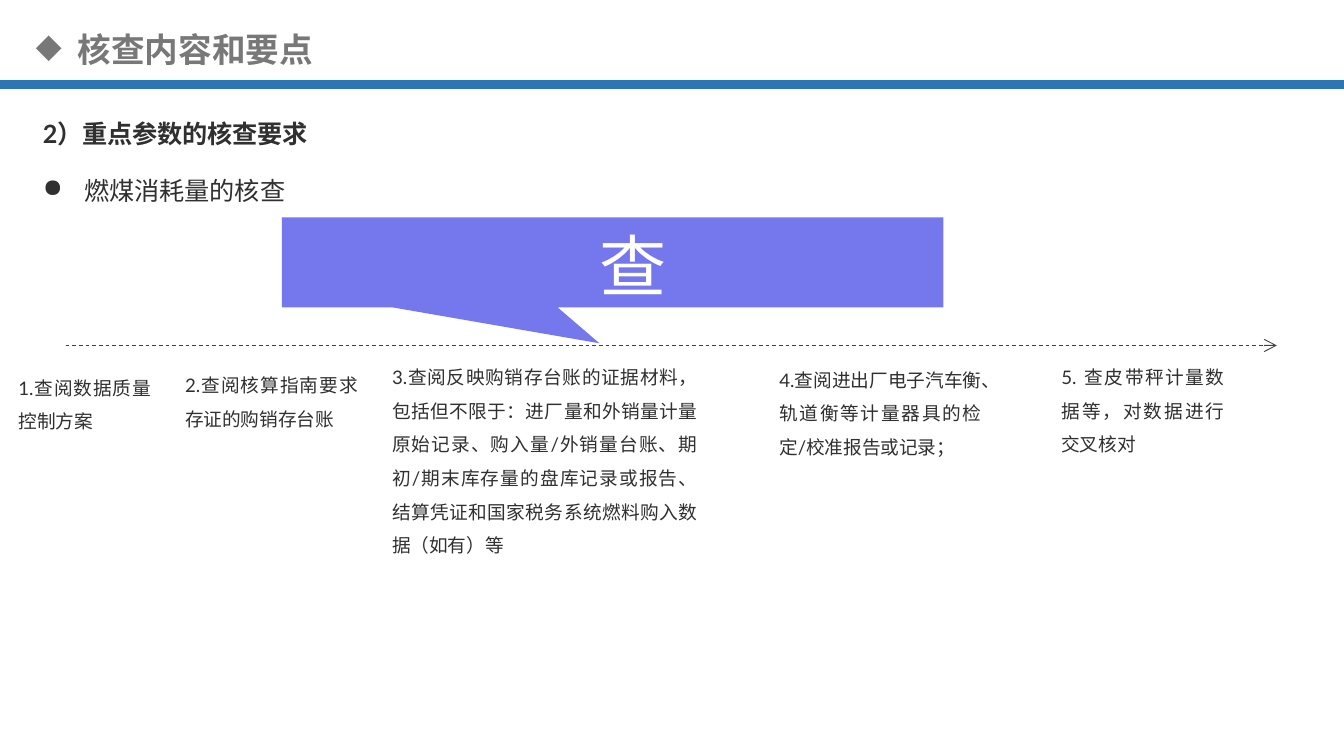
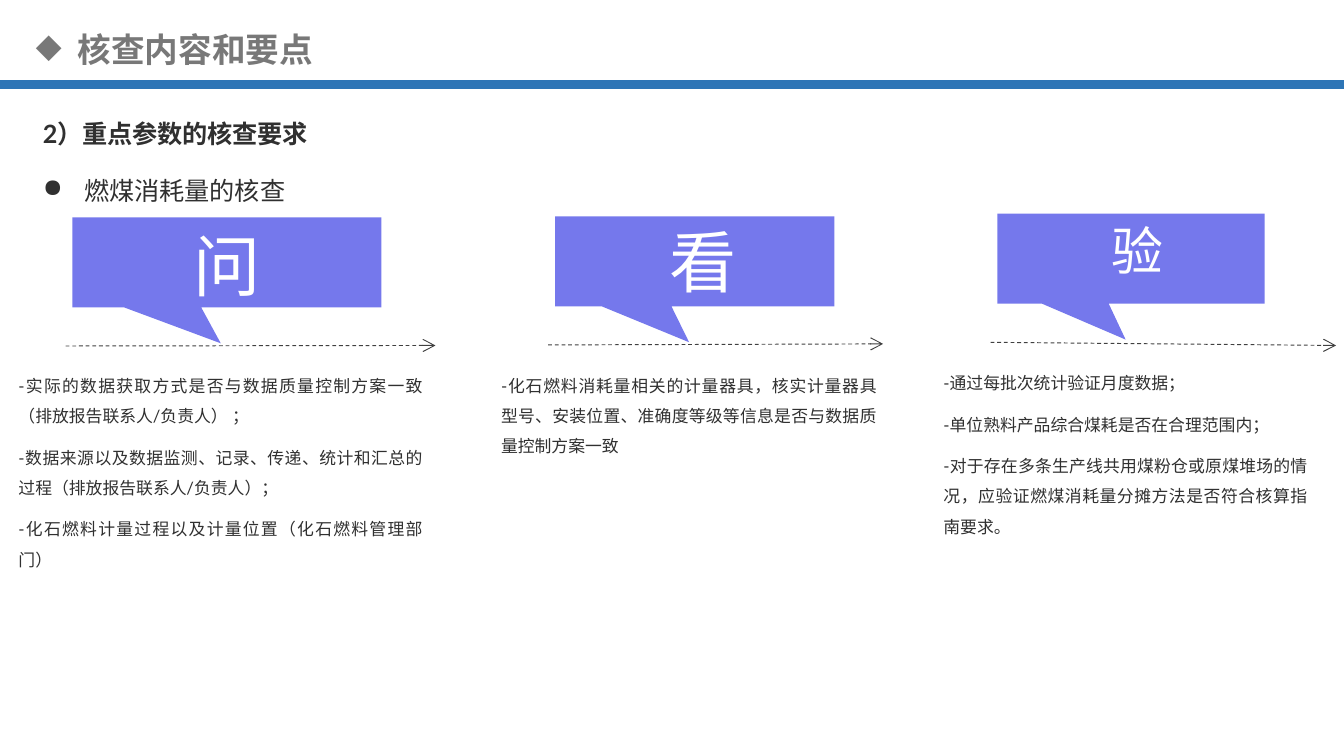
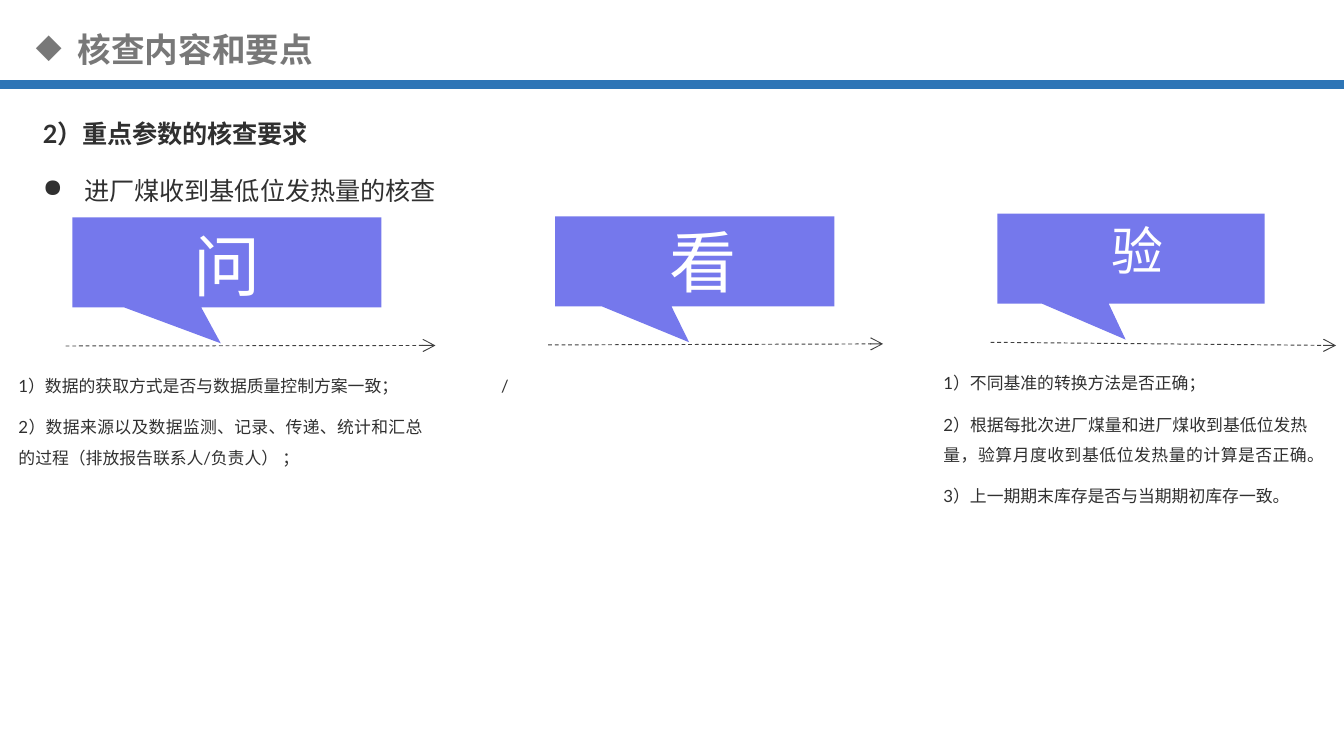
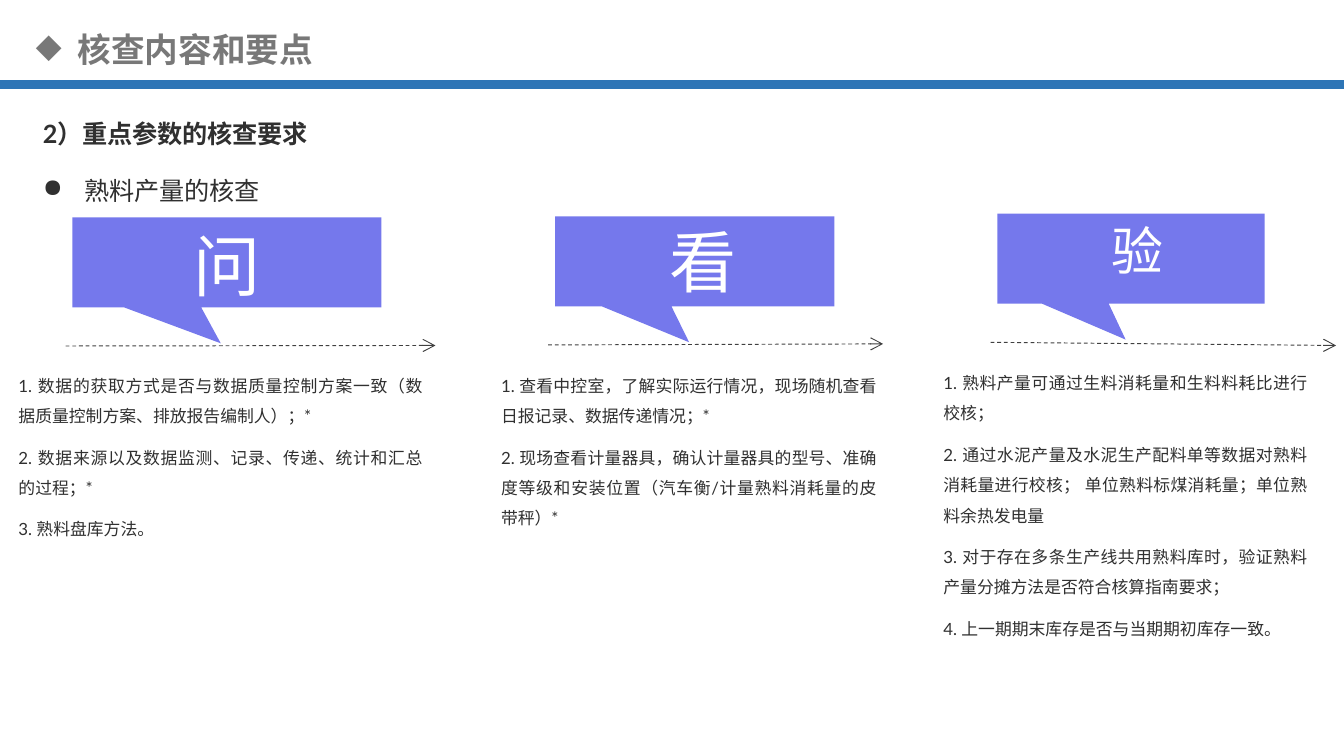
from dataclasses import dataclass

from lxml import etree
from pptx import Presentation
from pptx.dml.color import RGBColor
from pptx.enum.dml import MSO_LINE
from pptx.enum.shapes import MSO_CONNECTOR, MSO_SHAPE
from pptx.enum.text import MSO_AUTO_SIZE, PP_ALIGN
from pptx.oxml.ns import qn
from pptx.util import Cm, Pt

DASH = MSO_LINE.DASH
LINE = MSO_CONNECTOR.STRAIGHT
CALL = MSO_SHAPE.RECTANGULAR_CALLOUT
FIT, FIXED = MSO_AUTO_SIZE.SHAPE_TO_FIT_TEXT, MSO_AUTO_SIZE.NONE
LEFT, CENTER, JUST = PP_ALIGN.LEFT, PP_ALIGN.CENTER, PP_ALIGN.JUSTIFY


@dataclass(frozen=True)
class Theme:
    title: str = "787878"
    rule: str = "2E75B6"
    ink: str = "303030"
    arrow: str = "404040"
    band: str = "7578EC"
    white: str = "FFFFFF"
    head_font: str = "Arial"
    font: str = "Lato"
    sign_font: str = "Noto Sans CJK SC"
    title_size: float = 18
    head_size: float = 13.5
    step_size: float = 10
    note_size: float = 9
    sign_size: float = 36
    small_sign: float = 27.8


T = Theme()


@dataclass(frozen=True)
class Lane:
    """One column: a callout with a sign, an arrow and notes (cm)."""
    sign: str
    size: float
    band: tuple      # left, top, width
    box: tuple       # left, top, width of the sign
    tip: tuple       # end of the arrow
    note: tuple      # top, width of the notes


LANES = (
    Lane("问", T.sign_size, (1.37, 4.11, 5.84), (3.4, 4.11, 2.03),
         (8.23, 6.53), (6.78, 8.13)),
    Lane("看", T.sign_size, (10.49, 4.09, 5.28), (12.4, 4.04, 1.83),
         (16.69, 6.5), (6.78, 7.59)),
    Lane("验", T.small_sign, (18.85, 4.04, 5.05), (20.75, 4.01, 1.75),
         (25.25, 6.53), (6.73, 7.37)),
)
BAND_H, SIGN_H = 1.7, 1.63
ARROW_DX, ARROW_DY, NOTE_DX = -0.13, 2.43, -1.27

# Steps of the first slide: left, top, width, height, text
STEPS = (
    (0.1, 6.78, 3, 1.47, "1.查阅数据质量控制方案"),
    (3.25, 6.73, 3.76, 1.47, "2.查阅核算指南要求存证的购销存台账"),
    (7.16, 6.58, 6.27, 4.04,
     "3.查阅反映购销存台账的证据材料，包括但不限于：进厂量和外销量计量原始记录、"
     "购入量/外销量台账、期初/期末库存量的盘库记录或报告、"
     "结算凭证和国家税务系统燃料购入数据（如有）等"),
    (14.48, 6.63, 4.32, 2.11,
     "4.查阅进出厂电子汽车衡、轨道衡等计量器具的检定/校准报告或记录；"),
    (19.81, 6.58, 3.58, 2.11, "5. 查皮带秤计量数据等，对数据进行交叉核对"),
)

# Slides with three lanes: topic, then height and notes for each lane
TOPICS = (
    ("燃煤消耗量的核查", (
        (3.51, ("-实际的数据获取方式是否与数据质量控制方案一致（排放报告联系人/负责人） ；",
                "-数据来源以及数据监测、记录、传递、统计和汇总的过程（排放报告联系人/负责人）；",
                "-化石燃料计量过程以及计量位置（化石燃料管理部门）")),
        (1.93, ("-化石燃料消耗量相关的计量器具，核实计量器具型号、安装位置、"
                "准确度等级等信息是否与数据质量控制方案一致",)),
        (3.51, ("-通过每批次统计验证月度数据；",
                "-单位熟料产品综合煤耗是否在合理范围内；",
                "-对于存在多条生产线共用煤粉仓或原煤堆场的情况，"
                "应验证燃煤消耗量分摊方法是否符合核算指南要求。")),
    )),
    ("进厂煤收到基低位发热量的核查", (
        (2.13, ("1）数据的获取方式是否与数据质量控制方案一致；",
                "2）数据来源以及数据监测、记录、传递、统计和汇总的过程（排放报告联系人/负责人） ；")),
        (0.76, ("/",)),
        (2.92, ("1）不同基准的转换方法是否正确；",
                "2）根据每批次进厂煤量和进厂煤收到基低位发热量，"
                "验算月度收到基低位发热量的计算是否正确。",
                "3）上一期期末库存是否与当期期初库存一致。")),
    )),
    ("熟料产量的核查", (
        (3.51, ("1. 数据的获取方式是否与数据质量控制方案一致（数据质量控制方案、排放报告编制人）；*",
                "2. 数据来源以及数据监测、记录、传递、统计和汇总的过程；*",
                "3. 熟料盘库方法。")),
        (3.28, ("1. 查看中控室，了解实际运行情况，现场随机查看日报记录、数据传递情况；*",
                "2. 现场查看计量器具，确认计量器具的型号、准确度等级和安装位置"
                "（汽车衡/计量熟料消耗量的皮带秤）*")),
        (5.44, ("1. 熟料产量可通过生料消耗量和生料料耗比进行校核；",
                "2. 通过水泥产量及水泥生产配料单等数据对熟料消耗量进行校核； "
                "单位熟料标煤消耗量；单位熟料余热发电量",
                "3. 对于存在多条生产线共用熟料库时，验证熟料产量分摊方法是否符合核算指南要求；",
                "4. 上一期期末库存是否与当期期初库存一致。")),
    )),
)


# Text
def add_box(slide, x, y, w, h, fit=FIT):
    frame = slide.shapes.add_textbox(Cm(x), Cm(y), Cm(w), Cm(h)).text_frame
    frame.word_wrap = True
    frame.auto_size = fit
    return frame


def add_para(frame, first, text, size, color, font, east, align=LEFT,
             bold=False, gap=None, space=None, mark=None):
    para = frame.paragraphs[0] if first else frame.add_paragraph()
    if mark:
        props = para._p.get_or_add_pPr()
        props.set("marL", str(Cm(0.79)))
        props.set("indent", str(-Cm(0.79)))
        etree.SubElement(props, qn("a:buChar")).set("char", mark)
    para.alignment = align
    if space:
        para.line_spacing = space
    if gap and not first:
        para.space_before = Pt(gap)
    run = para.add_run()
    run.text = text
    run.font.size = Pt(size)
    run.font.bold = bold
    run.font.color.rgb = RGBColor.from_string(color)
    run.font.name = font
    face = etree.SubElement(run._r.get_or_add_rPr(), qn("a:ea"))
    face.set("typeface", east)


def add_body(frame, lines, size):
    for i, text in enumerate(lines):
        add_para(frame, i == 0, text, size, T.ink, T.font, T.font,
                 JUST, gap=6, space=1.5)


# Lines and callouts
def add_line(slide, start, end, color, width):
    line = slide.shapes.add_connector(LINE, *map(Cm, start + end))
    line.line.color.rgb = RGBColor.from_string(color)
    line.line.width = Pt(width)
    etree.SubElement(line._element.spPr, qn("a:effectLst"))
    return line


def add_arrow(slide, start, end):
    line = add_line(slide, start, end, T.arrow, 0.5).line
    line.dash_style = DASH
    etree.SubElement(line._get_or_add_ln(), qn("a:tailEnd")).set("type", "arrow")


def add_call(slide, band, sign, box, size, align=LEFT):
    x, y, w = band
    call = slide.shapes.add_shape(CALL, Cm(x), Cm(y), Cm(w), Cm(BAND_H))
    call.adjustments[0], call.adjustments[1] = -0.02, 0.9
    call.shadow.inherit = False
    call.fill.solid()
    call.fill.fore_color.rgb = RGBColor.from_string(T.band)
    call.line.fill.background()
    frame = add_box(slide, *box, SIGN_H, FIXED)
    add_para(frame, True, sign, size, T.white, T.sign_font, T.font, align)


# Slides
def add_page(deck, topic):
    slide = deck.slides.add_slide(deck.slide_layouts[6])
    frame = add_box(slide, 0.43, 0.43, 24.51, 1.02)
    add_para(frame, True, "核查内容和要点", T.title_size, T.title,
             T.head_font, T.head_font, bold=True, mark="◆")
    add_line(slide, (0, 1.6), (25.4, 1.6), T.rule, 4.5)
    frame = add_box(slide, 0.56, 1.83, 23.57, 2.11)
    look = (T.head_size, T.ink, T.font, T.font, JUST)
    add_para(frame, True, "2）重点参数的核查要求", *look, bold=True, space=1.5)
    add_para(frame, False, topic, *look, gap=6, space=1.5, mark="●")
    return slide


def add_lane(slide, lane, height, notes):
    x, y, _ = lane.band
    top, width = lane.note
    add_call(slide, lane.band, lane.sign, lane.box, lane.size)
    add_arrow(slide, (x + ARROW_DX, y + ARROW_DY), lane.tip)
    add_body(add_box(slide, x + NOTE_DX, top, width, height), notes, T.note_size)


def add_steps(deck):
    slide = add_page(deck, "燃煤消耗量的核查")
    add_call(slide, (5.33, 4.11, 12.5), "查", (7.37, 4.11, 9.19),
             T.sign_size, CENTER)
    add_arrow(slide, (1.24, 6.53), (24.13, 6.53))
    for *place, text in STEPS:
        add_body(add_box(slide, *place), [text], T.step_size)


def main():
    deck = Presentation()
    deck.slide_width, deck.slide_height = Cm(25.4), Cm(14.29)
    add_steps(deck)
    for topic, cells in TOPICS:
        slide = add_page(deck, topic)
        for lane, (height, notes) in zip(LANES, cells):
            add_lane(slide, lane, height, notes)
    deck.save("out.pptx")


if __name__ == "__main__":
    main()
